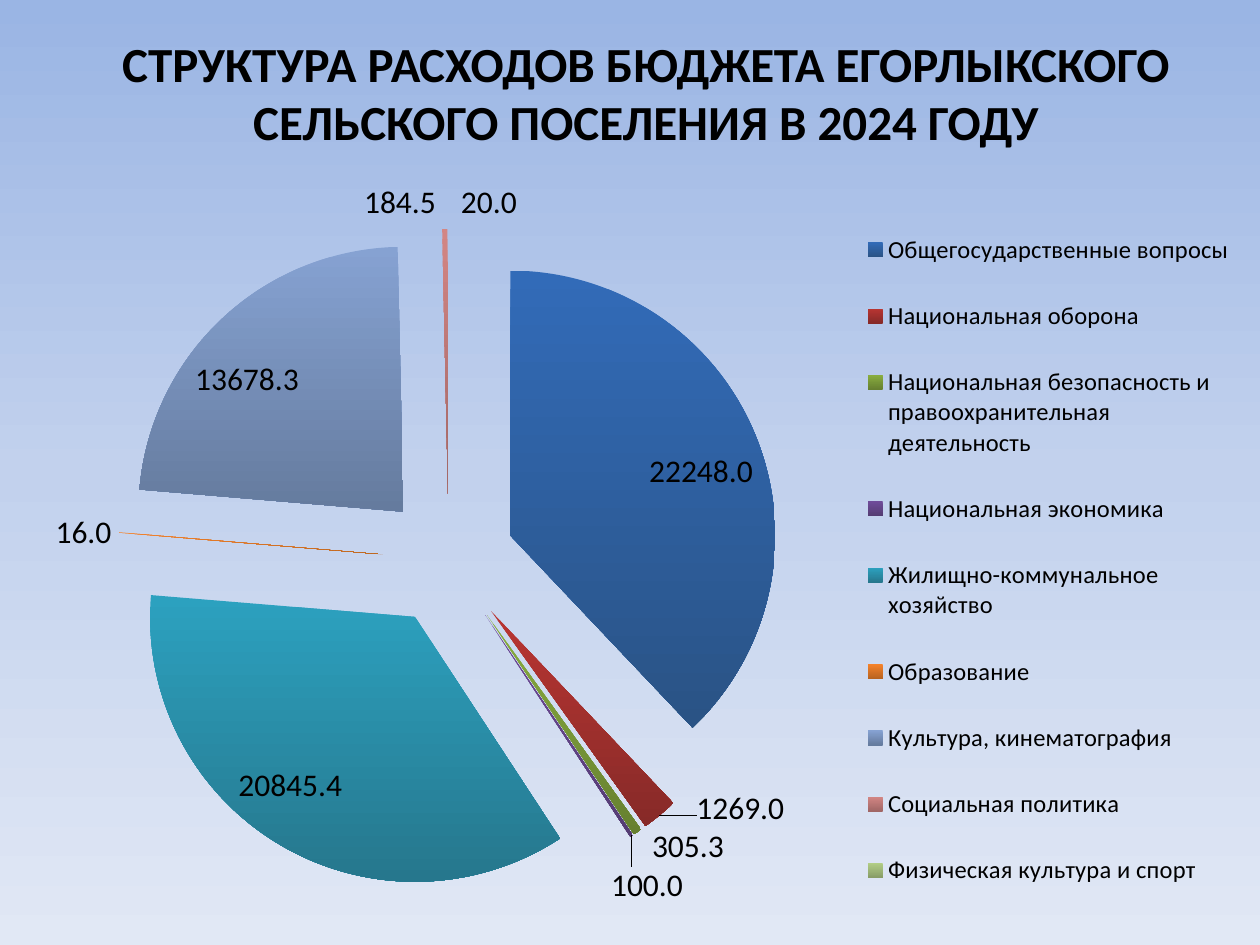
import copy

import lxml.etree
import pptx
import pptx.chart.data
import pptx.dml.color
import pptx.enum.chart
import pptx.enum.text
import pptx.oxml.ns
import pptx.util

Pt = pptx.util.Pt
qn = pptx.oxml.ns.qn

COLOURS = {
    "text": "000000",
    "sky_top": "9AB5E4",
    "sky_middle": "C2D1ED",
    "sky_bottom": "E1E8F5",
}

# Section, amount, upper and lower colour of its slice
SPENDING = [
    ("Общегосударственные вопросы", 22248.0, "326BB8", "2A5385"),
    ("Национальная оборона", 1269.0, "B93532", "872A28"),
    ("Национальная безопасность и правоохранительная деятельность",
     305.3, "8AAE40", "668030"),
    ("Национальная экономика", 100.0, "6F4C9A", "543C72"),
    ("Жилищно-коммунальное хозяйство", 20845.4, "2CA1BF", "26778D"),
    ("Образование", 16.0, "F5822A", "B8631F"),
    ("Культура, кинематография", 13678.3, "86A2D2", "657B9E"),
    ("Социальная политика", 184.5, "D38684", "A06665"),
    ("Физическая культура и спорт", 20.0, "B2CE86", "889D67"),
]


def rgb(value):
    return pptx.dml.color.RGBColor.from_string(value)


def format_font(font, **values):
    for name, value in values.items():
        setattr(font, name, value)
    font.color.rgb = rgb(COLOURS["text"])


def fill_downward(fill, top, bottom):
    fill.gradient()
    fill.gradient_angle = 270
    for stop, colour, position in zip(fill.gradient_stops, (top, bottom), (0, 1)):
        stop.color.rgb = rgb(colour)
        stop.position = position


def paint_background(page):
    fill_downward(page.background.fill, COLOURS["sky_top"], COLOURS["sky_bottom"])
    first = next(page.element.iter(qn("a:gs")))
    middle = copy.deepcopy(first)
    middle.set("pos", "50000")
    next(middle.iter(qn("a:srgbClr"))).set("val", COLOURS["sky_middle"])
    first.addnext(middle)


def add_title(page, text):
    title = page.shapes.title
    place = {"left": Pt(60), "top": Pt(15), "width": Pt(618), "height": Pt(75)}
    for name, value in place.items():
        setattr(title, name, value)
    frame = title.text_frame
    frame.word_wrap = True
    frame.vertical_anchor = pptx.enum.text.MSO_ANCHOR.MIDDLE
    para = frame.paragraphs[0]
    para.alignment = pptx.enum.text.PP_ALIGN.CENTER
    span = para.add_run()
    span.text = text
    format_font(span.font, name="Calibri", size=Pt(28), bold=True)


def make_layout(x, y, w, h, inner=False):
    layout = lxml.etree.Element(qn("c:layout"))
    manual = lxml.etree.SubElement(layout, qn("c:manualLayout"))
    values = {"layoutTarget": "inner"} if inner else {}
    values.update(xMode="edge", yMode="edge", x=x, y=y, w=w, h=h)
    for name, value in values.items():
        lxml.etree.SubElement(manual, qn("c:" + name)).set("val", str(value))
    return layout


def place_parts(chart):
    plot_area = next(chart.element.iter(qn("c:plotArea")))
    legend = next(chart.element.iter(qn("c:legend")))
    for part in (plot_area, legend):
        for old in part.findall(qn("c:layout")):
            part.remove(old)
    plot_area.insert(0, make_layout(0.09, 0.08, 0.53, 0.87, inner=True))
    legend.find(qn("c:legendPos")).addnext(make_layout(0.68, 0.04, 0.31, 0.95))


def pull_apart(chart, percent):
    explosion = lxml.etree.Element(qn("c:explosion"))
    explosion.set("val", str(percent))
    points = list(chart.element.iter(qn("c:dPt")))
    points[0].addprevious(explosion)
    for point in points:
        point.find(qn("c:spPr")).addprevious(copy.deepcopy(explosion))


def add_spending_pie(page):
    data = pptx.chart.data.CategoryChartData(number_format="0.0")
    data.categories = [row[0] for row in SPENDING]
    data.add_series("Series 1", [row[1] for row in SPENDING])
    chart = page.shapes.add_chart(
        pptx.enum.chart.XL_CHART_TYPE.PIE,
        Pt(3), Pt(96), Pt(714), Pt(435), data).chart
    chart.has_title = False
    format_font(chart.font, name="Calibri", size=Pt(18))

    # Legend
    chart.has_legend = True
    chart.legend.position = pptx.enum.chart.XL_LEGEND_POSITION.RIGHT
    chart.legend.include_in_layout = False
    format_font(chart.legend.font, name="Calibri", size=Pt(14))

    # Slices
    plot = chart.plots[0]
    plot.vary_by_categories = True
    series = plot.series[0]
    for index, (_, _, top, bottom) in enumerate(SPENDING):
        fill_downward(series.points[index].format.fill, top, bottom)
    pull_apart(chart, 25)

    # Values
    plot.has_data_labels = True
    labels = plot.data_labels
    settings = {
        "show_value": True,
        "show_percentage": False,
        "number_format": "0.0",
        "number_format_is_linked": False,
        "position": pptx.enum.chart.XL_LABEL_POSITION.BEST_FIT,
    }
    for name, value in settings.items():
        setattr(labels, name, value)
    format_font(labels.font, name="Calibri", size=Pt(18))
    place_parts(chart)


def main():
    deck = pptx.Presentation()
    deck.slide_width, deck.slide_height = Pt(720), Pt(540)
    page = deck.slides.add_slide(deck.slide_layouts[5])
    paint_background(page)
    add_title(page, "СТРУКТУРА РАСХОДОВ БЮДЖЕТА ЕГОРЛЫКСКОГО "
                    "СЕЛЬСКОГО ПОСЕЛЕНИЯ В 2024 ГОДУ")
    add_spending_pie(page)
    deck.save("out.pptx")


if __name__ == "__main__":
    main()
